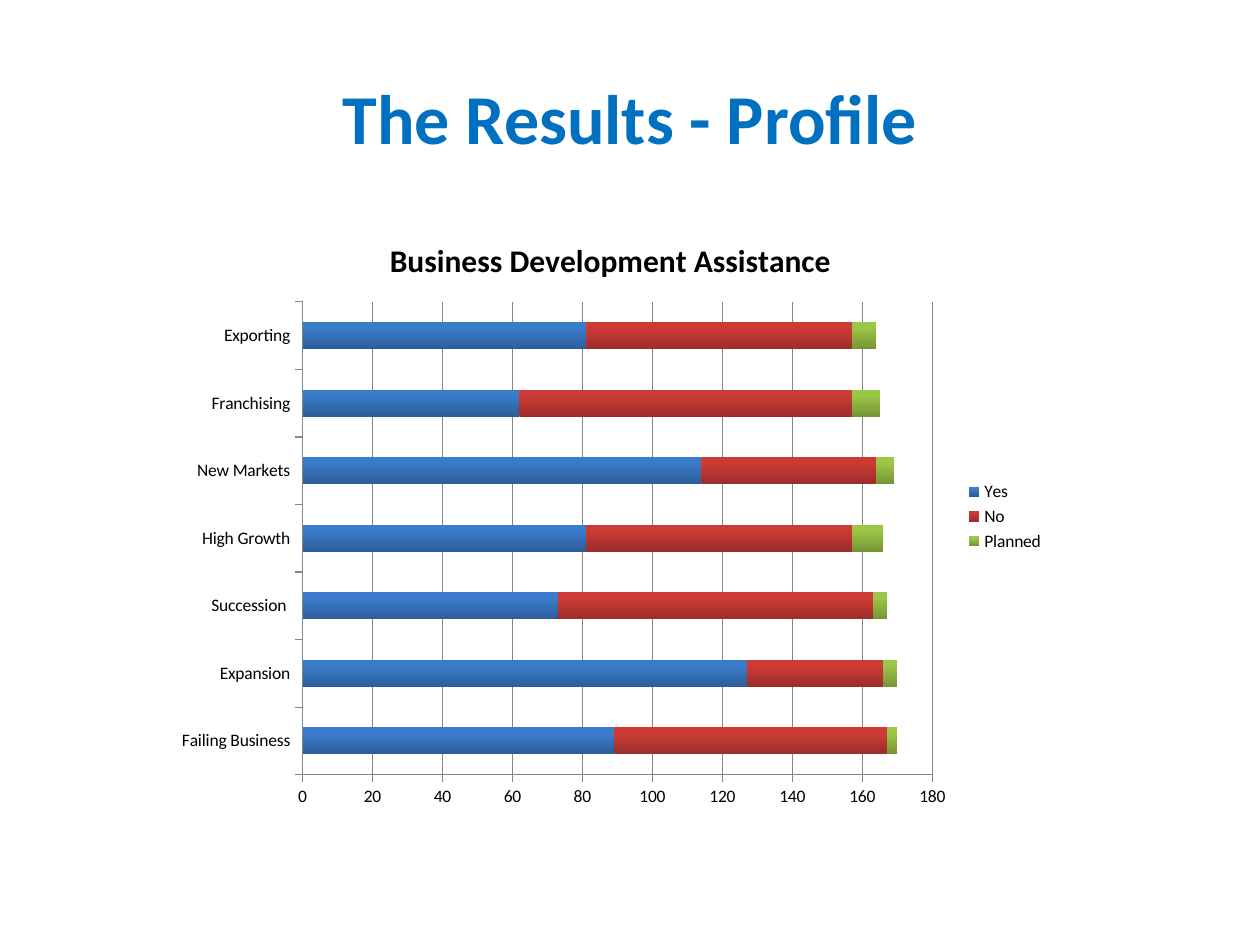
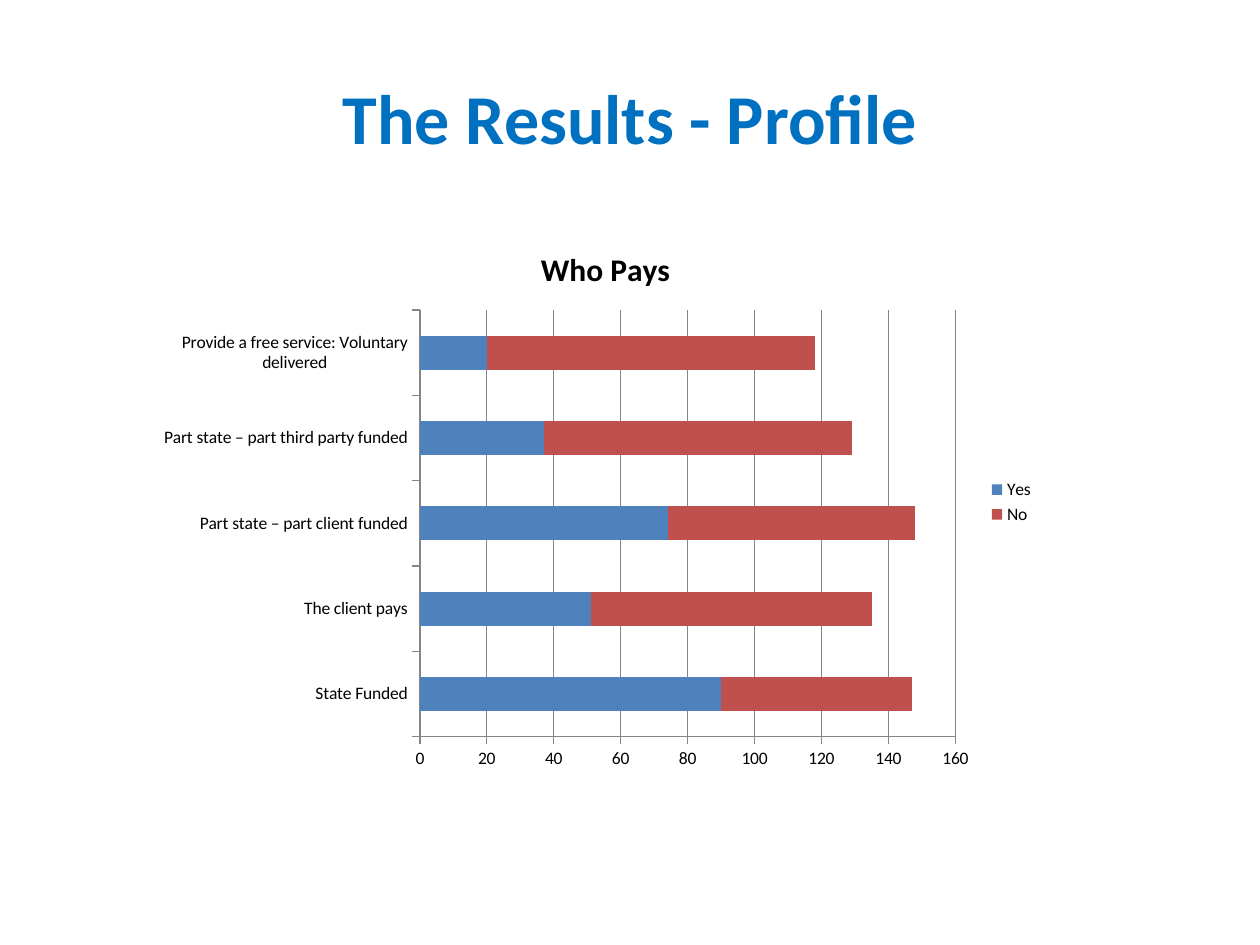
from pptx import Presentation
from pptx.chart.data import CategoryChartData
from pptx.dml.color import RGBColor
from pptx.enum.chart import XL_CHART_TYPE, XL_LEGEND_POSITION, XL_TICK_MARK
from pptx.enum.text import MSO_ANCHOR, PP_ALIGN
from pptx.util import Emu, Pt

BAR_STACKED = XL_CHART_TYPE.BAR_STACKED
LEGEND_RIGHT = XL_LEGEND_POSITION.RIGHT
TICK_OUTSIDE = XL_TICK_MARK.OUTSIDE
ANCHOR_MIDDLE = MSO_ANCHOR.MIDDLE
ALIGN_CENTER = PP_ALIGN.CENTER

PX_PER_INCH = 126
EMU_PER_INCH = 914400
SLIDE_SIZE = (1260, 945)
TITLE_BOX = (63, 38, 1134, 157)
TITLE_ONLY_LAYOUT = 5
FONT = "Calibri"
COLORS = {
    "title": "0070C0",
    "text": "000000",
    "axis": "868686",
    "background": "FFFFFF",
    "yes": "4F81BD",
    "no": "C0504D",
    "yes_dark": "2C5D98",
    "yes_light": "3A7CCB",
    "no_dark": "9B2D2A",
    "no_light": "CE3B37",
    "planned_dark": "769535",
    "planned_light": "9CC746",
}

PROFILE_SLIDES = [
    {
        "title": "Business Development Assistance",
        "box": (164, 214, 893, 605),
        "categories": ["Failing Business", "Expansion", "Succession ", "High Growth",
                       "New Markets", "Franchising", "Exporting"],
        "series": [
            ("Yes", [89, 127, 73, 81, 114, 62, 81], ("yes_dark", "yes_light")),
            ("No", [78, 39, 90, 76, 50, 95, 76], ("no_dark", "no_light")),
            ("Planned", [3, 4, 4, 9, 5, 8, 7], ("planned_dark", "planned_light")),
        ],
    },
    {
        "title": "Who Pays",
        "box": (164, 224, 883, 556),
        "categories": ["State Funded", "The client pays", "Part state – part client funded",
                       "Part state – part third party funded",
                       "Provide a free service: Voluntary delivered"],
        "series": [
            ("Yes", [90, 51, 74, 37, 20], ("yes",)),
            ("No", [57, 84, 74, 92, 98], ("no",)),
        ],
    },
]


def px(length):
    return Emu(round(length * EMU_PER_INCH / PX_PER_INCH))


def color(name):
    return RGBColor.from_string(COLORS[name])


def format_font(font, size, color_name, bold=False):
    font.name = FONT
    font.size = Pt(size)
    font.bold = bold
    font.color.rgb = color(color_name)


def place_title(slide, text, box):
    title = slide.shapes.title
    title.left, title.top, title.width, title.height = map(px, box)
    title.text_frame.text = text
    title.text_frame.vertical_anchor = ANCHOR_MIDDLE
    paragraph = title.text_frame.paragraphs[0]
    paragraph.alignment = ALIGN_CENTER
    format_font(paragraph.runs[0].font, 40, "title", bold=True)


def fill_bars(fill, color_names):
    if len(color_names) == 1:
        fill.solid()
        fill.fore_color.rgb = color(color_names[0])
        return
    fill.gradient()
    fill.gradient_angle = 90
    for stop, name, position in zip(fill.gradient_stops, color_names, (0, 0.8)):
        stop.color.rgb = color(name)
        stop.position = position


def format_axis(axis):
    axis.major_tick_mark = TICK_OUTSIDE
    axis.format.line.color.rgb = color("axis")
    axis.format.line.width = Pt(0.75)
    format_font(axis.tick_labels.font, 10, "text")


def place_bar_chart(slide, content):
    data = CategoryChartData()
    data.categories = content["categories"]
    for name, values, _ in content["series"]:
        data.add_series(name, values)
    chart = slide.shapes.add_chart(BAR_STACKED, *map(px, content["box"]), data).chart
    format_font(chart.font, 10, "text")

    chart.has_title = True
    title_frame = chart.chart_title.text_frame
    title_frame.text = content["title"]
    format_font(title_frame.paragraphs[0].runs[0].font, 18, "text", bold=True)
    chart.chart_title.include_in_layout = False

    chart.has_legend = True
    chart.legend.position = LEGEND_RIGHT
    chart.legend.include_in_layout = False
    format_font(chart.legend.font, 10, "text")

    for axis in (chart.category_axis, chart.value_axis):
        format_axis(axis)
    chart.value_axis.has_major_gridlines = True
    gridline = chart.value_axis.major_gridlines.format.line
    gridline.color.rgb = color("axis")
    gridline.width = Pt(0.75)

    plot = chart.plots[0]
    plot.gap_width = 150
    plot.overlap = 100
    plot.vary_by_categories = False
    for series, (_, _, color_names) in zip(plot.series, content["series"]):
        fill_bars(series.format.fill, color_names)


def add_profile_slide(presentation, content):
    slide = presentation.slides.add_slide(presentation.slide_layouts[TITLE_ONLY_LAYOUT])
    slide.background.fill.solid()
    slide.background.fill.fore_color.rgb = color("background")
    place_title(slide, "The Results - Profile", TITLE_BOX)
    place_bar_chart(slide, content)


def main():
    presentation = Presentation()
    presentation.slide_width, presentation.slide_height = map(px, SLIDE_SIZE)
    for content in PROFILE_SLIDES:
        add_profile_slide(presentation, content)
    presentation.save("out.pptx")


if __name__ == "__main__":
    main()
